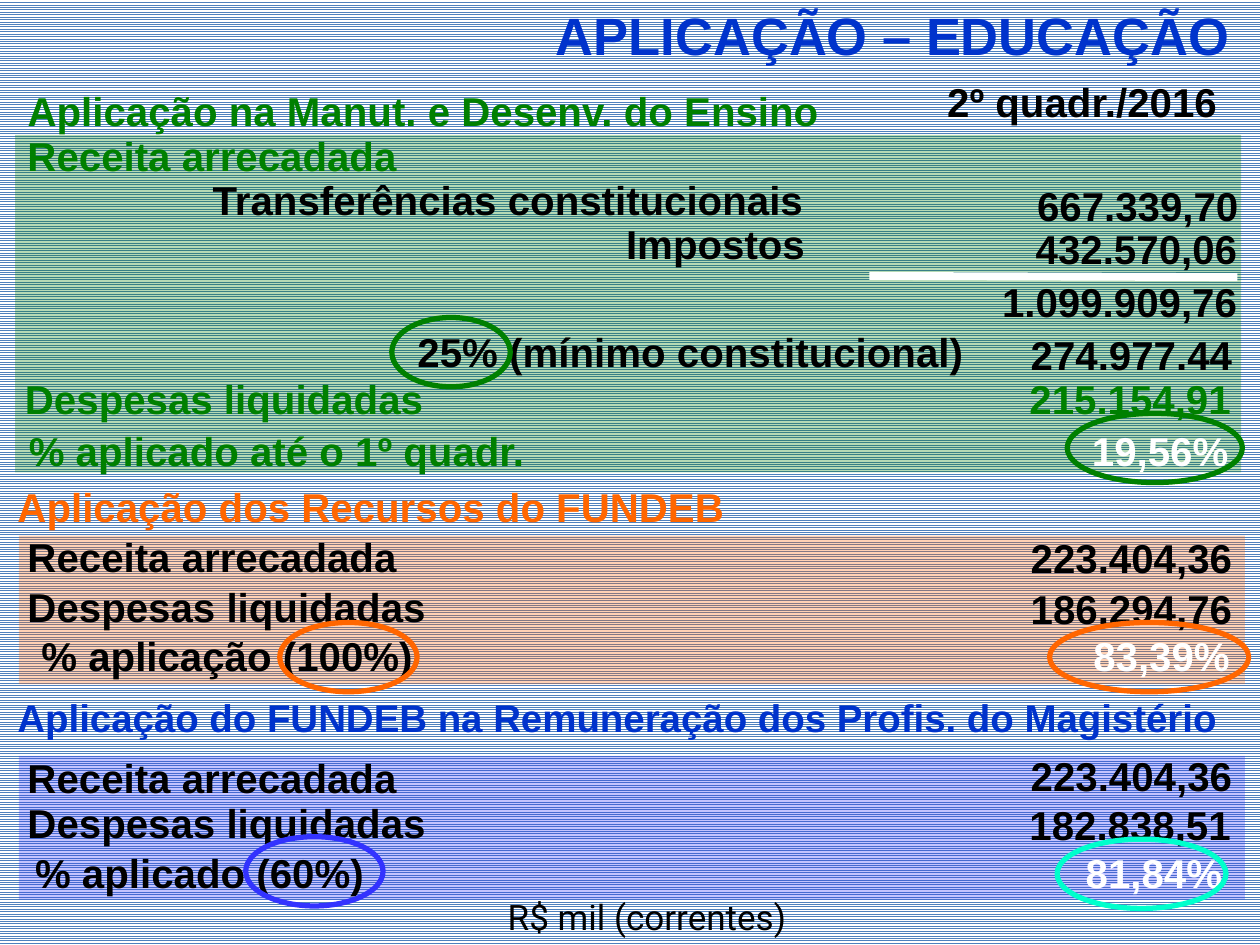
"""Build the slide on education spending for the second four-month period of 2016."""
import pptx
import pptx.util
import pptx.dml.color
import pptx.enum.dml
import pptx.enum.shapes
import pptx.enum.text
import lxml.etree
from pptx.oxml.ns import qn

THEME = {
    "font": "Arial", "note_font": "Roboto",
    "title": 30, "text": 23, "small": 22, "note": 20,
    "green": "008000", "orange": "FF6600", "blue": "0033CC", "violet": "3333FF",
    "aqua": "00FFCC", "black": "000000", "white": "FFFFFF", "stripe": "4F81BD",
}
COLS, ROWS = 100, 75
TIGHT, LOOSE = 3.8, 4.8
AMOUNT, SHARE = 24.4, 18.9

TITLE = "APLICAÇÃO – EDUCAÇÃO"
NOTE = "R$ mil (correntes)"

BANDS = [
    (1.2, 10.7, 26.8, "green"),
    (1.5, 42.5, 11.8, "orange"),
    (1.5, 60, 11.4, "violet"),
]
HEADINGS = [
    ("Aplicação na Manut. e Desenv. do Ensino", 1.2, 7.4, 70.9, "green", "text"),
    ("Aplicação dos Recursos do FUNDEB", 0.4, 38.8, 66.1, "orange", "text"),
    ("Aplicação do FUNDEB na Remuneração dos Profis. do Magistério",
     0.4, 55.6, 103.2, "blue", "small"),
]
LABELS = [
    ("Receita arrecadada", 1.2, 11, 43.3, TIGHT, "green"),
    ("Despesas liquidadas", 1, 29.2, 39.4, LOOSE, "green"),
    ("% aplicado até o 1º quadr.", 1.3, 33.3, 52.8, LOOSE, "green"),
    ("Receita arrecadada", 1.2, 42.8, 43.3, TIGHT, "black"),
    ("Despesas liquidadas", 1.2, 45.7, 39.4, LOOSE, "black"),
    ("% aplicação (100%)", 2.3, 49.6, 37, LOOSE, "black"),
    ("Receita arrecadada", 1.2, 60.3, 43.3, TIGHT, "black"),
    ("Despesas liquidadas", 1.2, 62.9, 39.4, LOOSE, "black"),
    ("% aplicado (60%)", 1.8, 66.8, 37, LOOSE, "black"),
]
RIGHT_TEXTS = [
    ("2º quadr./2016", 97.6, 6.7, 28.4, TIGHT, "black"),
    ("Transferências constitucionais", 64.8, 13.4, 55.8, LOOSE, "black"),
    ("Impostos", 64.9, 16.9, 19.6, LOOSE, "black"),
    ("25% (mínimo constitucional)", 77.5, 25.5, 48, LOOSE, "black"),
    ("667.339,70", 99.3, 13.9, AMOUNT, LOOSE, "black"),
    ("432.570,06", 99.2, 17.3, AMOUNT, LOOSE, "black"),
    ("1.099.909,76", 99.2, 21.5, AMOUNT, LOOSE, "black"),
    ("274.977.44", 98.8, 25.7, AMOUNT, LOOSE, "black"),
    ("215.154,91", 98.7, 29.2, AMOUNT, LOOSE, "green"),
    ("19,56%", 98.5, 33.3, SHARE, LOOSE, "white"),
    ("223.404,36", 98.8, 41.8, AMOUNT, LOOSE, "black"),
    ("186.294,76", 98.8, 45.9, AMOUNT, LOOSE, "black"),
    ("83,39%", 98.6, 49.6, SHARE, LOOSE, "white"),
    ("223.404,36", 98.8, 59.1, AMOUNT, LOOSE, "black"),
    ("182.838,51", 98.7, 63, AMOUNT, LOOSE, "black"),
    ("81,84%", 98, 66.8, SHARE, LOOSE, "white"),
]
RINGS = [
    (31.1, 25.2, 9.4, "green"), (84.7, 32.8, 13.9, "green"),
    (22.2, 49.4, 10.9, "orange"), (83.3, 49.4, 15.8, "orange"),
    (19.5, 66.4, 10.9, "violet"), (83.9, 66.6, 13.4, "aqua"),
]

prs = pptx.Presentation()
prs.slide_width = pptx.util.Inches(10)
prs.slide_height = pptx.util.Inches(7.5)
slide = prs.slides.add_slide(prs.slide_layouts[5])


def rgb(name):
    """Return a theme colour."""
    return pptx.dml.color.RGBColor.from_string(THEME[name])


def cells(left, top, width, height):
    """Turn grid cells into a position and size."""
    w, h = prs.slide_width / COLS, prs.slide_height / ROWS
    return [int(v) for v in (left * w, top * h, width * w, height * h)]


def write(sp, text, color, size="text", font="font", bold=True, right=False, tight=False, wrap=True):
    """Fill a shape with one formatted paragraph."""
    tf = sp.text_frame
    tf.word_wrap = wrap
    tf.auto_size = pptx.enum.text.MSO_AUTO_SIZE.SHAPE_TO_FIT_TEXT
    tf.vertical_anchor = pptx.enum.text.MSO_ANCHOR.TOP
    p = tf.paragraphs[0]
    align = pptx.enum.text.PP_ALIGN
    p.alignment = align.RIGHT if right else align.LEFT
    if tight:
        p.line_spacing = 0.7
    r = p.add_run()
    r.text = text
    r.font.name, r.font.size = THEME[font], pptx.util.Pt(THEME[size])
    r.font.bold, r.font.color.rgb = bold, rgb(color)


def add_text(box, *args, **style):
    """Add a text box on the grid."""
    write(slide.shapes.add_textbox(*cells(*box)), *args, **style)


def add_band(left, top, height, color):
    """Add a translucent band."""
    kind = pptx.enum.shapes.MSO_SHAPE.RECTANGLE
    sp = slide.shapes.add_shape(kind, *cells(left, top, 97.3, height))
    sp.shadow.inherit = False
    sp.fill.solid()
    sp.fill.fore_color.rgb = rgb(color)
    sp.line.fill.background()
    clr = sp.fill._xPr.find(".//" + qn("a:srgbClr"))
    lxml.etree.SubElement(clr, qn("a:alpha")).set("val", "29000")


def add_ring(left, top, width, color):
    """Add an outlined ellipse."""
    kind = pptx.enum.shapes.MSO_SHAPE.OVAL
    sp = slide.shapes.add_shape(kind, *cells(left, top, width, 5.5))
    sp.shadow.inherit = False
    sp.fill.background()
    sp.line.color.rgb = rgb(color)
    sp.line.width = pptx.util.Pt(3)


def add_sum_line():
    """Add the rule above the total."""
    x, y, w, h = cells(69, 21.9, 29.2, 0.1)
    kind = pptx.enum.shapes.MSO_CONNECTOR.STRAIGHT
    ln = slide.shapes.add_connector(kind, x, y, x + w, y + h)
    ln.line.color.rgb = rgb("white")
    ln.line.width = pptx.util.Pt(4.5)
    lxml.etree.SubElement(ln._element.spPr, qn("a:effectLst"))


def main():
    """Lay out the slide and save it."""
    fill = slide.background.fill
    fill.patterned()
    fill.pattern = pptx.enum.dml.MSO_PATTERN.NARROW_HORIZONTAL
    fill.fore_color.rgb, fill.back_color.rgb = rgb("stripe"), rgb("white")

    title = slide.shapes.title
    title.left, title.top, title.width, title.height = cells(0, -0.3, 98.6, 6.1)
    write(title, TITLE, "blue", "title", right=True)

    for band in BANDS:
        add_band(*band)
    for text, left, top, width, color, size in HEADINGS:
        add_text((left, top, width, TIGHT), text, color, size, tight=True)
    for text, left, top, width, height, color in LABELS:
        add_text((left, top, width, height), text, color, tight=height == TIGHT)
    for text, edge, top, width, height, color in RIGHT_TEXTS:
        add_text((edge - width, top, width, height), text, color,
                 right=True, tight=height == TIGHT)
    add_sum_line()
    for ring in RINGS:
        add_ring(*ring)
    add_text((39, 70.6, 24.4, 4.4), NOTE, "black", "note", "note_font",
             bold=False, right=True, wrap=False)
    prs.save("out.pptx")


if __name__ == "__main__":
    main()
